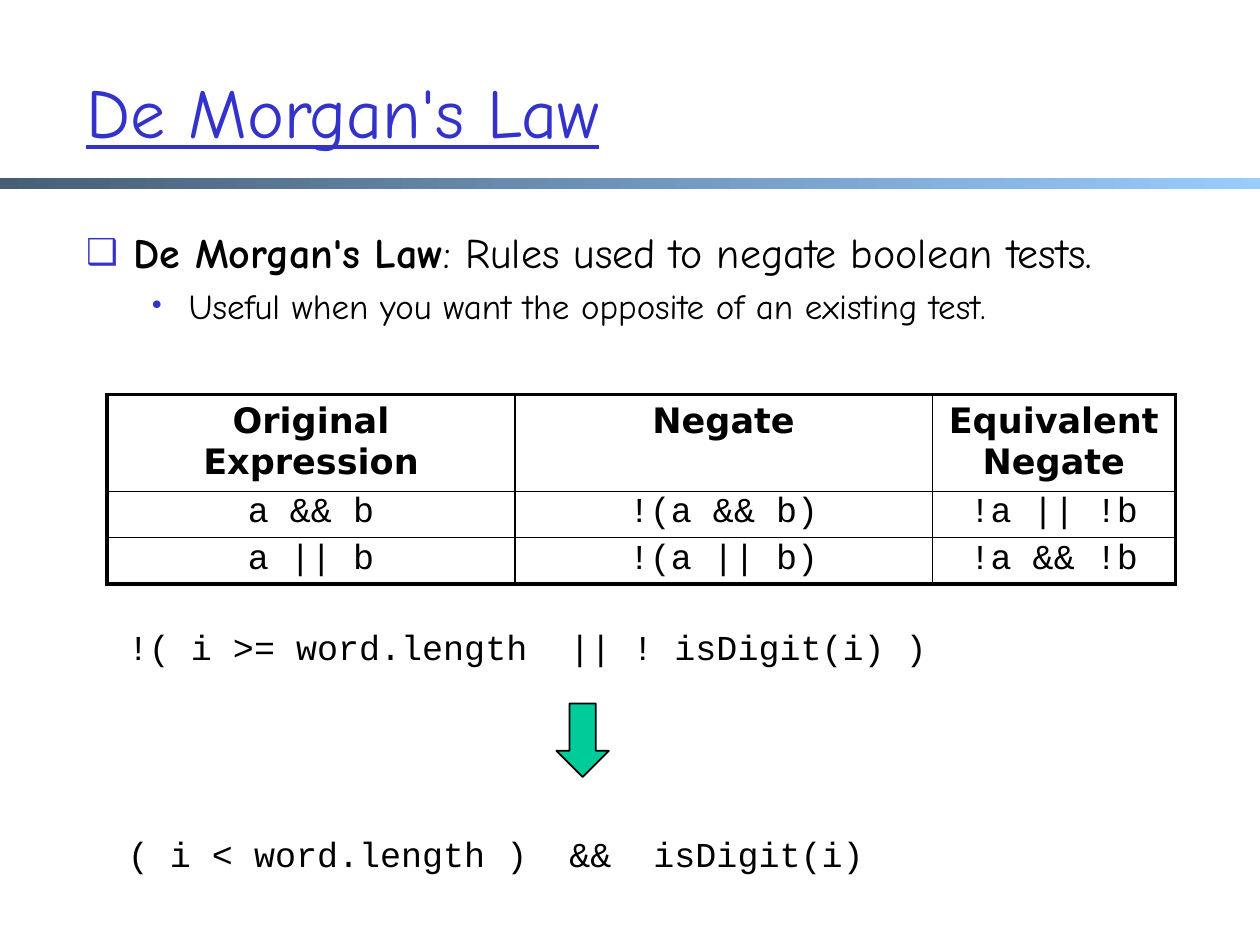
from dataclasses import dataclass

from lxml import etree
from pptx import Presentation
from pptx.dml.color import RGBColor
from pptx.enum.shapes import MSO_SHAPE
from pptx.enum.text import MSO_ANCHOR, PP_ALIGN
from pptx.oxml.ns import qn
from pptx.util import Pt

RECTANGLE, DOWN_ARROW = MSO_SHAPE.RECTANGLE, MSO_SHAPE.DOWN_ARROW
LEFT, CENTER = PP_ALIGN.LEFT, PP_ALIGN.CENTER
MIDDLE, TOP = MSO_ANCHOR.MIDDLE, MSO_ANCHOR.TOP

BLACK = RGBColor(0x00, 0x00, 0x00)
BLUE = RGBColor(0x33, 0x33, 0xCC)
GREEN = RGBColor(0x00, 0xCC, 0x99)
SLATE = RGBColor(0x47, 0x5E, 0x76)
SKY = RGBColor(0x99, 0xCC, 0xFF)

HAND, CODE, HEADING = "Comic Neue", "Courier New", "DejaVu Sans"
THICK, THIN = 2.25, 1


@dataclass(frozen=True)
class Bullet:
    runs: tuple  # (text, bold) pairs
    level: int
    size: float
    indent: float
    hanging: float
    symbol: str
    symbol_percent: int


@dataclass(frozen=True)
class CodeLine:
    text: str
    top: float
    width: float


BULLETS = (
    Bullet((("De Morgan's Law", True),
            (": Rules used to negate boolean tests.", False)),
           0, 24, 27, 27, "❑", 85),
    Bullet((("Useful when you want the opposite of an existing test.", False),),
           1, 20, 58.5, 22.5, "•", 75),
)
CODE_LINES = (
    CodeLine("!( i >= word.length  || ! isDigit(i) )", 354, 475),
    CodeLine("( i < word.length )  &&  isDigit(i)", 472, 438.5),
)
TABLE_ROWS = (
    ("Original Expression", "Negate", "Equivalent\vNegate"),
    ("a && b", "!(a && b)", "!a || !b"),
    ("a || b", "!(a || b)", "!a && !b"),
)
COLUMN_WIDTHS = (233, 238.5, 139)
ROW_HEIGHTS = (55.25, 26.5, 26.5)


def place(shape, left: float, top: float, width: float, height: float) -> None:
    shape.left, shape.top = Pt(left), Pt(top)
    shape.width, shape.height = Pt(width), Pt(height)


def set_font(font, color: RGBColor, **values) -> None:
    for name, value in values.items():
        setattr(font, name, value)
    font.color.rgb = color


def set_bullet(paragraph, bullet: Bullet) -> None:
    properties = paragraph._p.get_or_add_pPr()
    properties.set("marL", str(Pt(bullet.indent)))
    properties.set("indent", str(-Pt(bullet.hanging)))
    color = etree.SubElement(properties, qn("a:buClr"))
    etree.SubElement(color, qn("a:srgbClr"), val=str(BLUE))
    etree.SubElement(properties, qn("a:buSzPct"),
                     val=str(bullet.symbol_percent * 1000))
    etree.SubElement(properties, qn("a:buFont"), typeface="DejaVu Sans")
    etree.SubElement(properties, qn("a:buChar"), char=bullet.symbol)


def set_borders(cell, widths: dict) -> None:
    properties = cell._tc.get_or_add_tcPr()
    for position, (side, width) in enumerate(widths.items()):
        line = etree.Element(qn(f"a:ln{side}"), w=str(Pt(width)))
        fill = etree.SubElement(line, qn("a:solidFill"))
        etree.SubElement(fill, qn("a:srgbClr"), val=str(BLACK))
        properties.insert(position, line)


def add_bar(slide) -> None:
    bar = slide.shapes.add_shape(RECTANGLE, 0, Pt(101.75), Pt(720), Pt(6))
    bar.shadow.inherit = False
    bar.line.fill.background()
    bar.fill.gradient()
    bar.fill.gradient_angle = 0
    for stop, color in zip(bar.fill.gradient_stops, (SLATE, SKY)):
        stop.color.rgb = color


def fill_title(title) -> None:
    place(title, 42, 18, 612, 90)
    title.text_frame.vertical_anchor = MIDDLE
    paragraph = title.text_frame.paragraphs[0]
    paragraph.alignment = LEFT
    run = paragraph.add_run()
    run.text = "De Morgan's Law"
    set_font(run.font, BLUE, name=HAND, size=Pt(40), underline=True)


def fill_body(body) -> None:
    place(body, 42, 126, 612, 366)
    frame = body.text_frame
    frame.vertical_anchor = TOP
    for index, bullet in enumerate(BULLETS):
        paragraph = frame.add_paragraph() if index else frame.paragraphs[0]
        paragraph.level = bullet.level
        paragraph.space_before = Pt(bullet.size * 0.2)
        set_bullet(paragraph, bullet)
        for text, bold in bullet.runs:
            run = paragraph.add_run()
            run.text = text
            set_font(run.font, BLACK, name=HAND, size=Pt(bullet.size), bold=bold)


def add_law_table(slide) -> None:
    last_row, last_column = len(ROW_HEIGHTS) - 1, len(COLUMN_WIDTHS) - 1
    table = slide.shapes.add_table(
        len(ROW_HEIGHTS), len(COLUMN_WIDTHS), Pt(61.25), Pt(225.5),
        Pt(sum(COLUMN_WIDTHS)), Pt(sum(ROW_HEIGHTS))).table
    table.first_row = table.horz_banding = False
    for column, width in zip(table.columns, COLUMN_WIDTHS):
        column.width = Pt(width)
    for row_index, (row, height) in enumerate(zip(table.rows, ROW_HEIGHTS)):
        row.height = Pt(height)
        is_header = row_index == 0
        for column_index, cell in enumerate(row.cells):
            cell.fill.background()
            # Thick outer frame, thin inner rules
            set_borders(cell, {
                "L": THICK if column_index == 0 else THIN,
                "R": THICK if column_index == last_column else THIN,
                "T": THICK if is_header else THIN,
                "B": THICK if row_index == last_row else THIN,
            })
            cell.text = TABLE_ROWS[row_index][column_index]
            paragraph = cell.text_frame.paragraphs[0]
            paragraph.alignment = CENTER
            paragraph.space_before = Pt(4)
            if not is_header:
                paragraph.line_spacing = 0.8
            for run in paragraph.runs:
                set_font(run.font, BLACK, name=HEADING if is_header else CODE,
                         size=Pt(20), bold=is_header)


def add_arrow(slide) -> None:
    arrow = slide.shapes.add_shape(DOWN_ARROW, Pt(318), Pt(402), Pt(30), Pt(42))
    arrow.shadow.inherit = False
    arrow.fill.solid()
    arrow.fill.fore_color.rgb = GREEN
    arrow.line.color.rgb = BLACK
    arrow.line.width = Pt(1)


def add_code_line(slide, line: CodeLine) -> None:
    box = slide.shapes.add_textbox(Pt(66), Pt(line.top), Pt(line.width), Pt(31.5))
    box.text_frame.word_wrap = False
    run = box.text_frame.paragraphs[0].add_run()
    run.text = line.text
    set_font(run.font, BLACK, name=CODE, size=Pt(20))


def main() -> None:
    presentation = Presentation()
    presentation.slide_width, presentation.slide_height = Pt(720), Pt(540)
    slide = presentation.slides.add_slide(presentation.slide_layouts[1])

    # Heading and rule
    add_bar(slide)
    fill_title(slide.shapes.title)

    # Definition and table of the two laws
    fill_body(slide.placeholders[1])
    add_law_table(slide)

    # Worked example
    add_arrow(slide)
    for line in CODE_LINES:
        add_code_line(slide, line)

    presentation.save("out.pptx")


if __name__ == "__main__":
    main()
